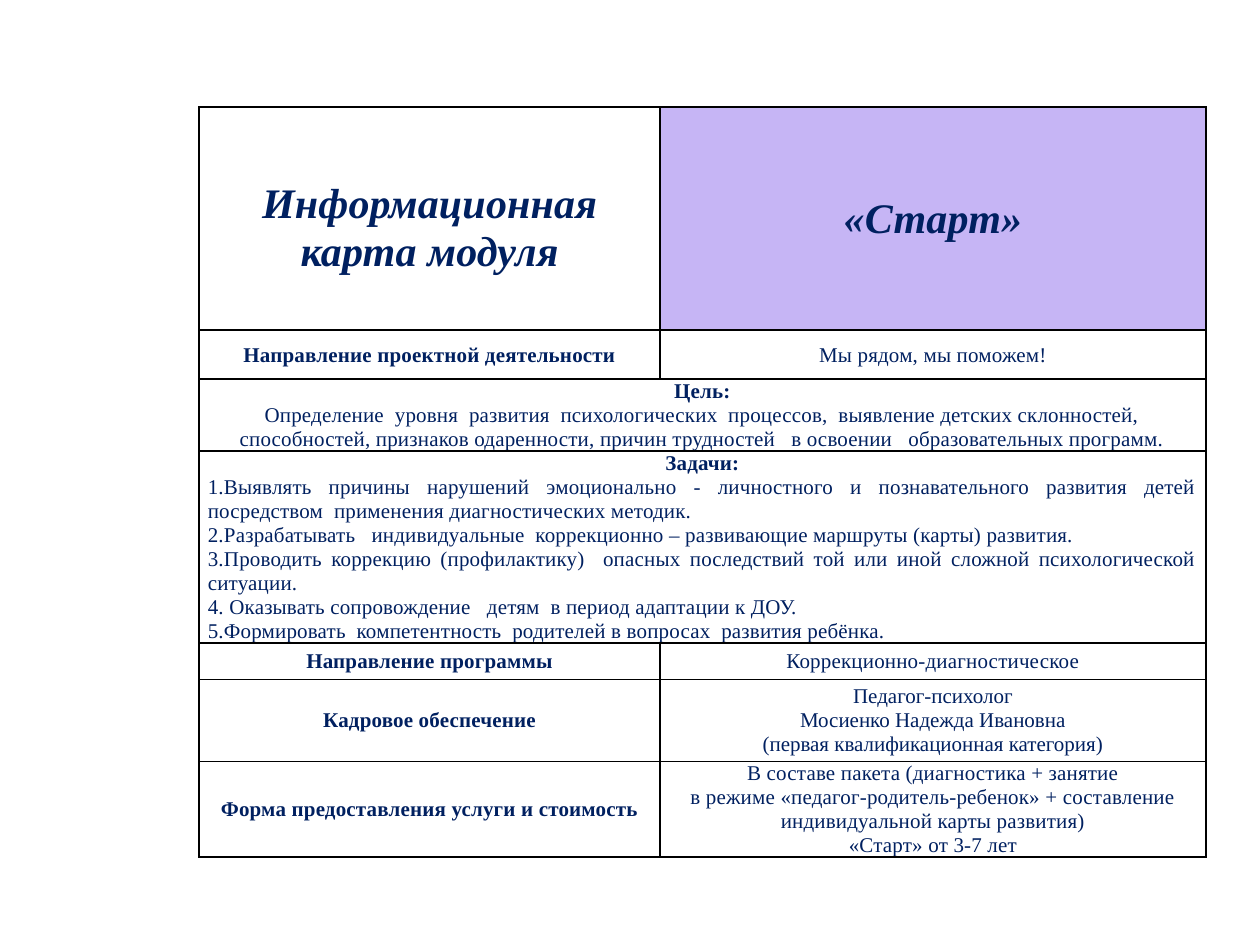
"""Build the information card slide of the «Старт» module."""
import pptx
import pptx.dml.color
import pptx.enum.text
import pptx.oxml
import pptx.oxml.ns
import pptx.util
from pptx.util import Inches, Pt

THEME = {
    "font": "Times New Roman",
    "text": "002060",
    "accent": "C6B5F5",
    "plain": "FFFFFF",
    "border": "000000",
    "title_size": 24,
    "body_size": 12,
    "line_pitch": 13.7,
    "tracking": 0.1,
    "border_width": 1,
}
ALIGN = pptx.enum.text.PP_ALIGN
ANCHOR = pptx.enum.text.MSO_ANCHOR
HANGING = -0.25

STYLES = {
    "title": {"size": "title_size", "bold": True, "italic": True, "lines": 2},
    "title_shifted": {"size": "title_size", "bold": True, "italic": True, "lines": 2, "indent": -0.08},
    "label": {"bold": True},
    "value": {},
    "task": {"align": ALIGN.JUSTIFY},
    "staff": {"indent": 0, "tracking": 0},
}

TABLE_LEFT, TABLE_TOP = 1.58, 0.85
COLUMN_WIDTHS = (3.66, 4.33)
ROWS = [
    (1.77, [
        [("title", "Информационная"), ("title_shifted", "карта модуля")],
        [("title", "«Старт»")],
    ]),
    (0.39, [
        [("label", "Направление проектной деятельности")],
        [("value", "Мы рядом, мы поможем!")],
    ]),
    (0.57, [[
        ("label", "Цель:"),
        ("value", "Определение  уровня  развития  психологических  процессов,  выявление детских склонностей, "
                  "способностей, признаков одаренности, причин трудностей   в освоении   образовательных программ."),
    ]]),
    (1.52, [[
        ("label", "Задачи:"),
        ("task", "1.Выявлять причины нарушений эмоционально - личностного и познавательного развития детей "
                 "посредством  применения диагностических методик."),
        ("task", "2.Разрабатывать   индивидуальные  коррекционно – развивающие маршруты (карты) развития."),
        ("task", "3.Проводить коррекцию (профилактику)  опасных последствий той или иной сложной "
                 "психологической ситуации."),
        ("task", "4. Оказывать сопровождение   детям  в период адаптации к ДОУ."),
        ("task", "5.Формировать  компетентность  родителей в вопросах  развития ребёнка."),
    ]]),
    (0.29, [
        [("label", "Направление программы")],
        [("value", "Коррекционно-диагностическое")],
    ]),
    (0.65, [
        [("label", "Кадровое обеспечение")],
        [("staff", "Педагог-психолог"),
         ("staff", "Мосиенко Надежда Ивановна"),
         ("staff", "(первая квалификационная категория)")],
    ]),
    (0.76, [
        [("label", "Форма предоставления услуги и стоимость")],
        [("value", "В составе пакета (диагностика + занятие"),
         ("value", "в режиме «педагог-родитель-ребенок» + составление индивидуальной карты развития)"),
         ("value", "«Старт» от 3-7 лет")],
    ]),
]
TITLE_OFFSET = 0.14


def color(name):
    return pptx.dml.color.RGBColor.from_string(THEME[name])


def format_cell(cell, fill):
    properties = cell._tc.get_or_add_tcPr()
    for side in ("lnL", "lnR", "lnT", "lnB"):
        properties.append(pptx.oxml.parse_xml(
            f'<a:{side} {pptx.oxml.ns.nsdecls("a")} w="{Pt(THEME["border_width"])}">'
            f'<a:solidFill><a:srgbClr val="{THEME["border"]}"/></a:solidFill></a:{side}>'))
    cell.fill.solid()
    cell.fill.fore_color.rgb = color(fill)
    cell.margin_left = cell.margin_right = Inches(0.07)
    cell.margin_top = cell.margin_bottom = 0
    cell.vertical_anchor = ANCHOR.MIDDLE


def write_paragraph(paragraph, style_name, text):
    style = STYLES[style_name]
    paragraph.text = text
    paragraph.alignment = style.get("align", ALIGN.CENTER)
    properties = paragraph._p.get_or_add_pPr()
    properties.set("marL", "0")
    properties.set("indent", str(Inches(style.get("indent", HANGING))))
    paragraph.line_spacing = Pt(THEME["line_pitch"] * style.get("lines", 1))
    font = paragraph.font
    font.name = THEME["font"]
    font.size = Pt(THEME[style.get("size", "body_size")])
    font.bold = style.get("bold", False)
    font.italic = style.get("italic", False)
    font.color.rgb = color("text")
    font._rPr.set("spc", str(round(style.get("tracking", THEME["tracking"]) * 100)))


def write_cell(cell, content):
    frame = cell.text_frame
    for index, (style_name, text) in enumerate(content):
        paragraph = frame.add_paragraph() if index else frame.paragraphs[0]
        write_paragraph(paragraph, style_name, text)


def add_card(slide):
    shape = slide.shapes.add_table(
        len(ROWS), len(COLUMN_WIDTHS), Inches(TABLE_LEFT), Inches(TABLE_TOP),
        Inches(sum(COLUMN_WIDTHS)), Inches(sum(height for height, _ in ROWS)))
    table = shape.table
    table.first_row = table.horz_banding = False
    for column, width in zip(table.columns, COLUMN_WIDTHS):
        column.width = Inches(width)
    for row_index, (height, contents) in enumerate(ROWS):
        table.rows[row_index].height = Inches(height)
        cells = [table.cell(row_index, column) for column in range(len(COLUMN_WIDTHS))]
        for cell in cells:
            format_cell(cell, "plain")
        if len(contents) == 1:
            cells[0].merge(cells[-1])
        for cell, content in zip(cells, contents):
            write_cell(cell, content)
    table.cell(0, 0).margin_top = Inches(TITLE_OFFSET)
    table.cell(0, 1).fill.fore_color.rgb = color("accent")


def main():
    presentation = pptx.Presentation()
    presentation.slide_width, presentation.slide_height = Inches(10), Inches(7.5)
    slide = presentation.slides.add_slide(presentation.slide_layouts[6])
    add_card(slide)
    presentation.save("out.pptx")


if __name__ == "__main__":
    main()
